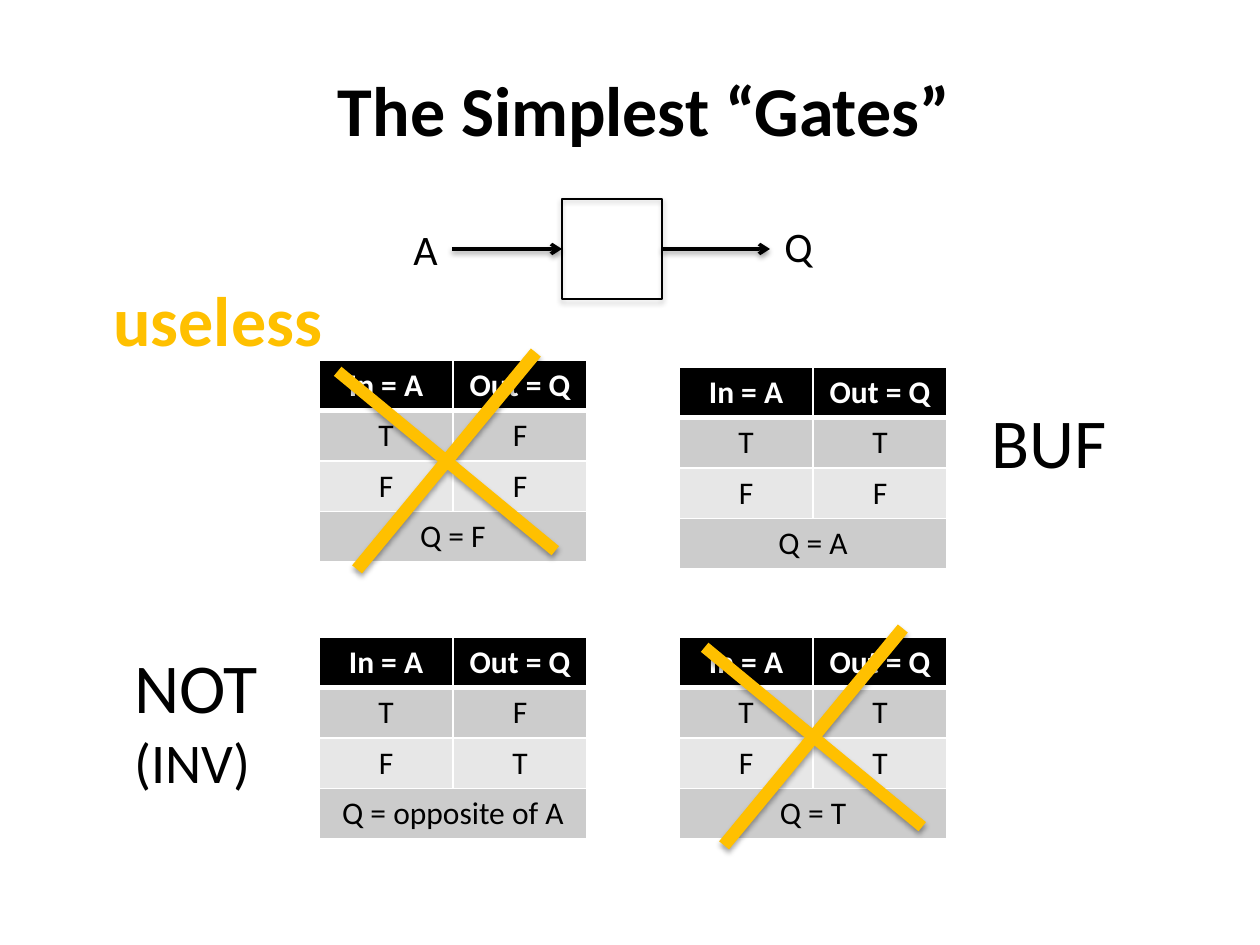
import lxml.etree
import pptx
import pptx.dml.color
import pptx.enum.shapes
import pptx.enum.text
import pptx.oxml.ns
import pptx.util

EMU_PER_PX = 914400 / 126
BLACK, WHITE, GOLD = "000000", "FFFFFF", "FFC000"
ROW_FILLS = [BLACK, "CCCCCC", "E7E7E7", "CCCCCC"]
CENTER = pptx.enum.text.PP_ALIGN.CENTER
LEFT = pptx.enum.text.PP_ALIGN.LEFT
SHAPES = pptx.enum.shapes.MSO_SHAPE


def px(length):
    return pptx.util.Emu(round(length * EMU_PER_PX))


def color(hex_text):
    return pptx.dml.color.RGBColor.from_string(hex_text)


def child(parent, tag, **attributes):
    """Append an XML element such as a:ln to parent."""
    return lxml.etree.SubElement(parent, pptx.oxml.ns.qn(tag), **attributes)


class GatePage:
    font = "Calibri"
    column_width = 134
    row_height = 50

    def __init__(self, deck):
        self.page = deck.slides.add_slide(deck.slide_layouts[6])

    def add_span(self, para, text, size, fill=BLACK, bold=False, align=LEFT):
        para.alignment = align
        span = para.add_run()
        span.text = text
        span.font.name = self.font
        span.font.size = pptx.util.Pt(size)
        span.font.bold = bold
        span.font.color.rgb = color(fill)

    def label(self, left, top, width, height, lines, fill=BLACK, bold=False,
              align=LEFT, wrap=False):
        """Add a text box; lines holds (text, size) pairs."""
        box = self.page.shapes.add_textbox(px(left), px(top), px(width), px(height))
        frame = box.text_frame
        frame.word_wrap = wrap
        frame.auto_size = pptx.enum.text.MSO_AUTO_SIZE.SHAPE_TO_FIT_TEXT
        for index, (text, size) in enumerate(lines):
            para = frame.add_paragraph() if index else frame.paragraphs[0]
            self.add_span(para, text, size, fill, bold, align)

    def cast_shadow(self, effects, distance, opacity):
        shadow = child(effects, "a:outerShdw", blurRad="40000", dist=str(distance),
                       dir="5400000", rotWithShape="0")
        tint = child(shadow, "a:srgbClr", val=BLACK)
        child(tint, "a:alpha", val=str(opacity * 1000))

    def shape(self, kind, left, top, width, height):
        shape = self.page.shapes.add_shape(kind, px(left), px(top), px(width), px(height))
        shape.shadow.inherit = False
        effects = shape.element.spPr.find(pptx.oxml.ns.qn("a:effectLst"))
        self.cast_shadow(effects, 23000, 35)
        return shape

    def gate(self, left, top, side):
        box = self.shape(SHAPES.RECTANGLE, left, top, side, side)
        box.fill.background()
        box.line.color.rgb = color(BLACK)
        box.line.width = pptx.util.Pt(0.75)
        return box

    def cross(self, left, top):
        cross = self.shape(SHAPES.CROSS, left, top, 281, 282)
        cross.adjustments[0] = 0.479
        cross.rotation = 309.5
        cross.fill.solid()
        cross.fill.fore_color.rgb = color(GOLD)
        cross.line.fill.background()

    def arrow(self, start, end, y):
        arrow = self.page.shapes.add_connector(
            pptx.enum.shapes.MSO_CONNECTOR.STRAIGHT, px(start), px(y), px(end), px(y))
        arrow.line.color.rgb = color(BLACK)
        arrow.line.width = pptx.util.Pt(2)
        properties = arrow.element.spPr
        child(properties.find(pptx.oxml.ns.qn("a:ln")), "a:tailEnd", type="arrow")
        self.cast_shadow(child(properties, "a:effectLst"), 20000, 38)
        return arrow

    def border(self, cell, row):
        properties = cell._tc.get_or_add_tcPr()
        widths = {"L": 1, "R": 1, "T": 3 if row == 1 else 1, "B": 3 if row == 0 else 1}
        for index, (side, width) in enumerate(widths.items()):
            edge = child(properties, f"a:ln{side}", w=str(int(pptx.util.Pt(width))))
            child(child(edge, "a:solidFill"), "a:srgbClr", val=WHITE)
            properties.insert(index, edge)

    def truth_table(self, left, top, outputs, rule):
        rows = [("In = A", "Out = Q"), ("T", outputs[0]), ("F", outputs[1]), (rule, "")]
        table = self.page.shapes.add_table(
            len(rows), 2, px(left), px(top), px(2 * self.column_width),
            px(len(rows) * self.row_height)).table
        for r, texts in enumerate(rows):
            for c, text in enumerate(texts):
                cell = table.cell(r, c)
                cell.fill.solid()
                cell.fill.fore_color.rgb = color(ROW_FILLS[r])
                self.border(cell, r)
                if text:
                    self.add_span(cell.text_frame.paragraphs[0], text, 18,
                                  BLACK if r else WHITE, r == 0, CENTER)
        table.cell(3, 0).merge(table.cell(3, 1))


def main():
    deck = pptx.Presentation()
    deck.slide_width, deck.slide_height = px(1260), px(945)
    page = GatePage(deck)

    page.label(287, 60, 714, 97, [("The Simplest “Gates”", 40)],
               bold=True, align=CENTER, wrap=True)
    gate = page.gate(562, 199, 100)
    page.arrow(452, 562, 249).end_connect(gate, 1)
    page.arrow(662, 770, 249).begin_connect(gate, 3)
    page.label(401, 217, 50, 63, [("A", 24)])
    page.label(772, 214, 55, 63, [("Q", 24)])

    page.truth_table(319, 360, "FF", "Q = F")
    page.truth_table(679, 367, "TF", "Q = A")
    page.truth_table(319, 637, "FT", "Q = opposite of A")
    page.truth_table(679, 637, "TT", "Q = T")

    page.label(979, 392, 141, 97, [("BUF", 40)])
    page.label(122, 637, 152, 165, [("NOT", 40), ("(INV)", 32)])
    page.cross(306, 320)
    page.cross(673, 596)
    page.label(101, 270, 237, 97, [("useless", 40)], fill=GOLD, bold=True)

    deck.save("out.pptx")


if __name__ == "__main__":
    main()
